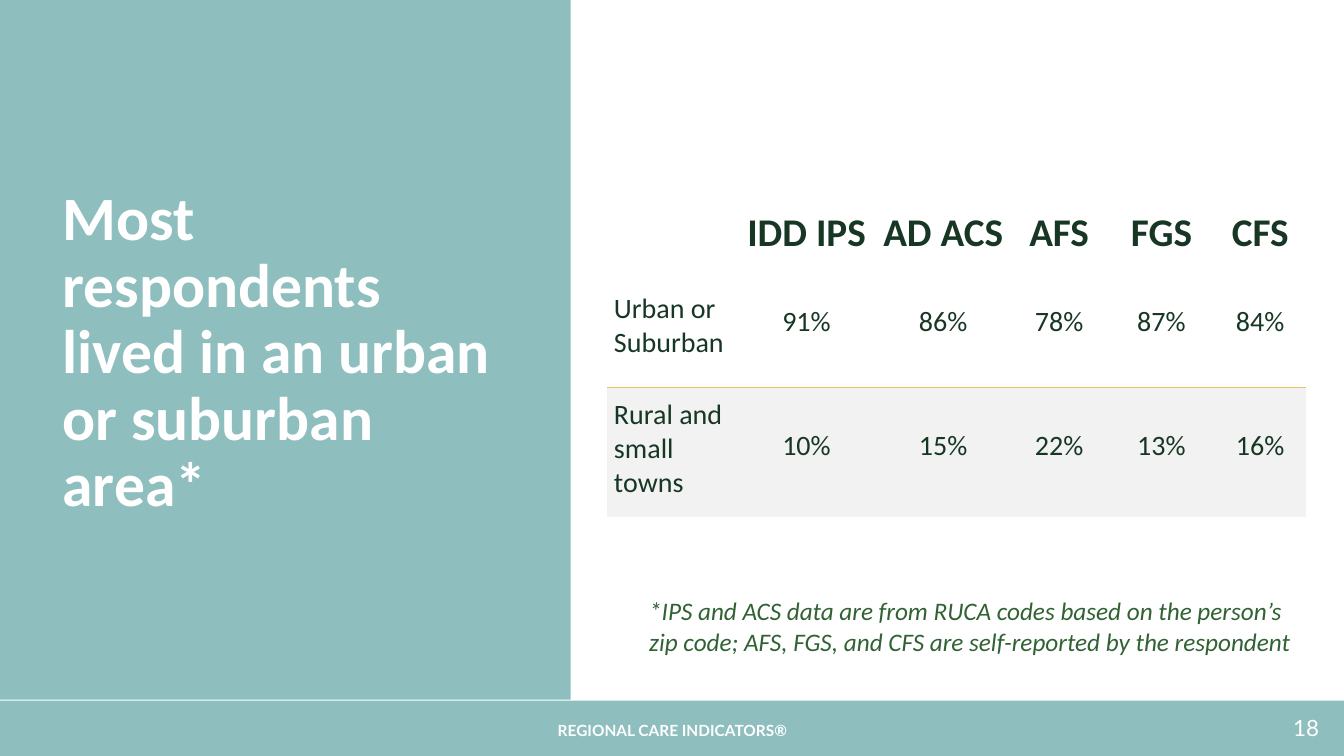
from dataclasses import dataclass

from lxml import etree
from pptx import Presentation
from pptx.dml.color import RGBColor
from pptx.enum.shapes import MSO_SHAPE
from pptx.enum.text import MSO_ANCHOR, MSO_AUTO_SIZE, PP_ALIGN
from pptx.oxml.ns import qn
from pptx.util import Inches, Pt

RECTANGLE = MSO_SHAPE.RECTANGLE
TOP, MIDDLE, BOTTOM = MSO_ANCHOR.TOP, MSO_ANCHOR.MIDDLE, MSO_ANCHOR.BOTTOM
LEFT, CENTER, RIGHT = PP_ALIGN.LEFT, PP_ALIGN.CENTER, PP_ALIGN.RIGHT
FIXED = MSO_AUTO_SIZE.NONE
TITLE_ONLY = 5
PLAIN_TABLE_STYLE = "{2D5ABB26-0587-4C30-8999-92F81FD0307C}"
SLIDE_WIDTH, SLIDE_HEIGHT = Inches(13.33), Inches(7.5)


@dataclass(frozen=True)
class Style:
    size: int
    color: str
    font: str = "Calibri"
    bold: bool = False
    italic: bool = False


@dataclass(frozen=True)
class Theme:
    teal: str = "8EBEBE"
    band: str = "F2F2F2"
    rule: str = "F0BF5D"
    title: Style = Style(44, "FFFFFF", bold=True)
    heading: Style = Style(28, "173724", bold=True)
    body: Style = Style(20, "173724")
    note: Style = Style(18, "316234", italic=True)
    number: Style = Style(16, "FFFFFF", "Lato")
    brand: Style = Style(11, "FFFFFF", "Lato", bold=True)


THEME = Theme()


@dataclass(frozen=True)
class Area:
    """Percentages of the slide's width and height."""
    left: float
    top: float
    width: float
    height: float

    def lengths(self) -> tuple:
        return (across(self.left), down(self.top),
                across(self.width), down(self.height))


@dataclass(frozen=True)
class Label:
    text: str
    area: Area
    style: Style
    align: int = LEFT
    anchor: int = TOP


def across(percent: float) -> int:
    return round(SLIDE_WIDTH * percent / 100)


def down(percent: float) -> int:
    return round(SLIDE_HEIGHT * percent / 100)


PANEL = Area(0, 0, 42.46, 92.54)
FOOTER = Area(0, 92.67, 100, 7.33)
TITLE = Area(3.9, 6.13, 34.66, 81.33)
TABLE = Area(45.16, 14.67, 51.91, 53.73)
COLUMN_WIDTHS = (9.68, 10.35, 9.98, 7.28, 7.95, 6.75)
ROW_HEIGHTS = (21.07, 15.47, 17.2)

TABLE_ROWS = (
    ("", "IDD IPS", "AD ACS", "AFS", "FGS", "CFS"),
    ("Urban or Suburban", "91%", "86%", "78%", "87%", "84%"),
    ("Rural and small towns", "10%", "15%", "22%", "13%", "16%"),
)

LABELS = (
    Label("*IPS and ACS data are from RUCA codes based on the person’s zip code; "
          "AFS, FGS, and CFS are self-reported by the respondent",
          Area(47.56, 78.13, 49.51, 9.47), THEME.note),
    Label("18", Area(76.37, 93.6, 22.51, 5.33), THEME.number, RIGHT, MIDDLE),
    Label("REGIONAL CARE INDICATORS®", Area(33.16, 94.67, 33.76, 4.27),
          THEME.brand, CENTER),
)


def write(frame, text: str, style: Style, align: int) -> None:
    frame.text = text
    for para in frame.paragraphs:
        para.alignment = align
        for span in para.runs:
            font = span.font
            font.name, font.size = style.font, Pt(style.size)
            font.bold, font.italic = style.bold, style.italic
            font.color.rgb = RGBColor.from_string(style.color)


def add_block(page, area: Area):
    block = page.shapes.add_shape(RECTANGLE, *area.lengths())
    block.shadow.inherit = False
    block.fill.solid()
    block.fill.fore_color.rgb = RGBColor.from_string(THEME.teal)
    block.line.fill.background()
    return block


def add_label(page, label: Label) -> None:
    box = page.shapes.add_textbox(*label.area.lengths())
    frame = box.text_frame
    frame.word_wrap = True
    frame.vertical_anchor = label.anchor
    write(frame, label.text, label.style, label.align)


def format_title(title) -> None:
    title.left, title.top, title.width, title.height = TITLE.lengths()
    frame = title.text_frame
    write(frame, "Most respondents lived in an urban or suburban area*",
          THEME.title, LEFT)
    frame.word_wrap = True
    frame.auto_size = FIXED
    frame.vertical_anchor = MIDDLE
    frame.paragraphs[0].line_spacing = 0.9


def add_rule(cell, side: str) -> None:
    """Draw a one-point border on the given side: lnT or lnB."""
    line = etree.Element(qn(f"a:{side}"), w=str(Pt(1)))
    fill = etree.SubElement(line, qn("a:solidFill"))
    etree.SubElement(fill, qn("a:srgbClr"), val=THEME.rule)
    cell._tc.get_or_add_tcPr().insert(0, line)


def format_cell(cell, text: str, row: int, column: int) -> None:
    is_heading, is_value = row == 0, row > 0 and column > 0
    write(cell.text_frame, text, THEME.heading if is_heading else THEME.body,
          CENTER if column else LEFT)
    cell.vertical_anchor = BOTTOM if is_heading else MIDDLE
    cell.margin_left = cell.margin_right = Inches(0.07)
    cell.margin_top = Inches(0 if is_value else 0.07)
    cell.margin_bottom = Inches(0.13)
    if row == 2:
        cell.fill.solid()
        cell.fill.fore_color.rgb = RGBColor.from_string(THEME.band)
    else:
        cell.fill.background()
    if not is_heading:
        add_rule(cell, "lnB" if row == 1 else "lnT")


def add_residence_table(page) -> None:
    holder = page.shapes.add_table(len(ROW_HEIGHTS), len(COLUMN_WIDTHS),
                                   *TABLE.lengths())
    table = holder.table
    table.first_row = table.horz_banding = False
    table._tbl.tblPr.find(qn("a:tableStyleId")).text = PLAIN_TABLE_STYLE
    for column, width in zip(table.columns, COLUMN_WIDTHS):
        column.width = across(width)
    for row, height in zip(table.rows, ROW_HEIGHTS):
        row.height = down(height)
    for row, texts in enumerate(TABLE_ROWS):
        for column, text in enumerate(texts):
            format_cell(table.cell(row, column), text, row, column)


def main() -> None:
    deck = Presentation()
    deck.slide_width, deck.slide_height = SLIDE_WIDTH, SLIDE_HEIGHT
    page = deck.slides.add_slide(deck.slide_layouts[TITLE_ONLY])

    # Coloured blocks, placed behind the title
    title = page.shapes.title
    for area in (FOOTER, PANEL):
        title.element.addprevious(add_block(page, area).element)

    # Title on the left panel
    format_title(title)

    # Table of shares by survey
    add_residence_table(page)

    # Footnote and footer texts
    for label in LABELS:
        add_label(page, label)

    deck.save("out.pptx")


if __name__ == "__main__":
    main()
